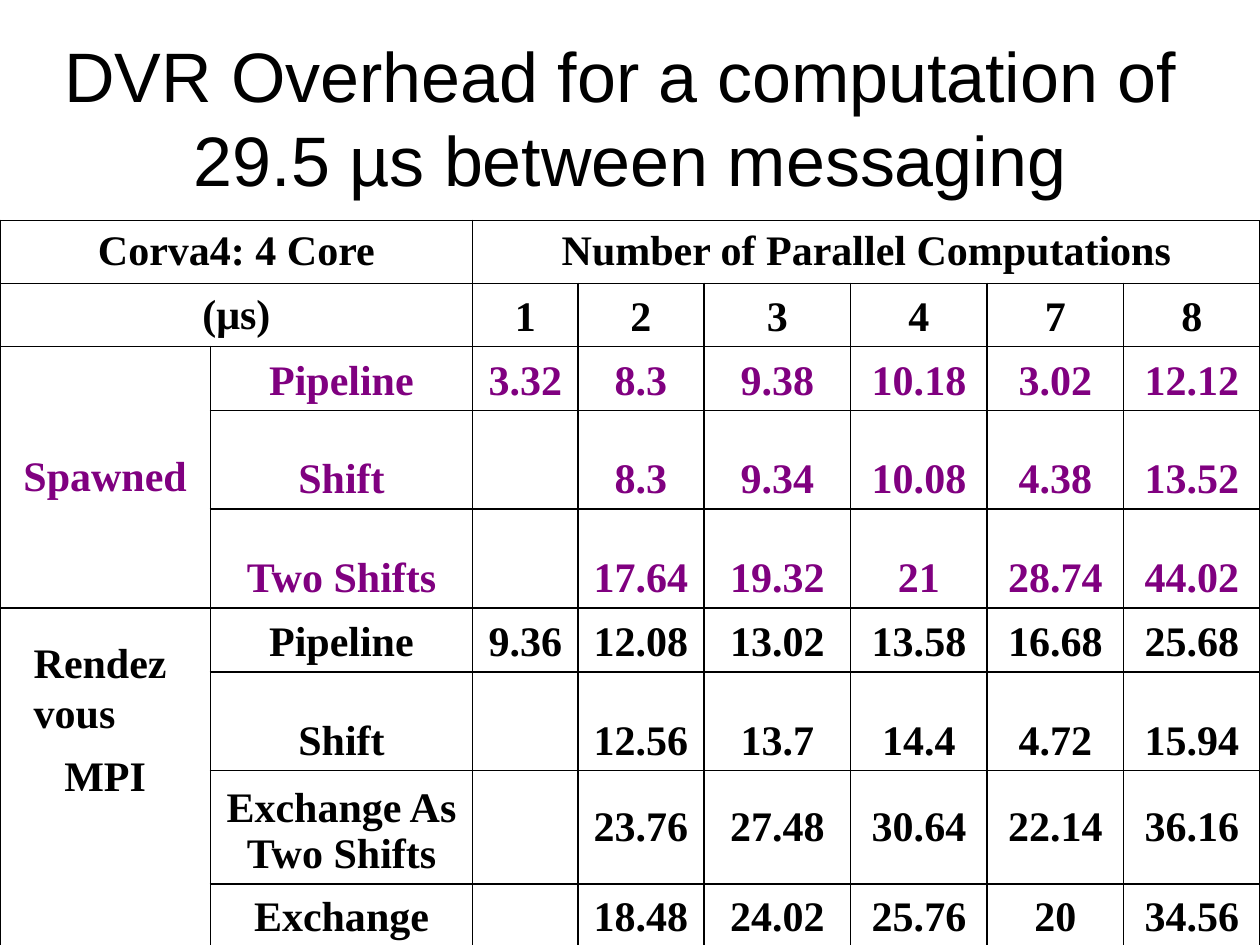
"""Build a slide with a table of messaging overheads."""
from dataclasses import dataclass

from lxml import etree
from pptx import Presentation
from pptx import util as u
from pptx.dml.color import RGBColor
from pptx.enum import text
from pptx.oxml.ns import qn


@dataclass(frozen=True)
class Theme:
    ink: str = "000000"
    accent: str = "800080"
    head_font: str = "Arial"
    body_font: str = "Times New Roman"
    head_size: int = 40
    body_size: int = 24
    head_leading: float = 48
    body_leading: float = 28.5
    rule: float = 1


@dataclass(frozen=True)
class Box:
    x: float
    y: float
    w: float
    h: float


@dataclass(frozen=True)
class Row:
    height: float
    label: str
    values: tuple
    color: str
    anchor: text.MSO_ANCHOR = text.MSO_ANCHOR.BOTTOM


@dataclass(frozen=True)
class Group:
    label: str
    first: int
    last: int
    color: str


T = Theme()
MIDDLE, BOTTOM = text.MSO_ANCHOR.MIDDLE, text.MSO_ANCHOR.BOTTOM
CENTER, LEFT = text.PP_ALIGN.CENTER, text.PP_ALIGN.LEFT
COLUMNS = (4.24, 5.29, 2.12, 2.54, 2.96, 2.75, 2.75, 2.75)
HEAD_HEIGHT = 1.27
COUNTS = ("1", "2", "3", "4", "7", "8")
ROWS = (
    Row(1.29, "Pipeline", ("3.32", "8.3", "9.38", "10.18", "3.02", "12.12"), T.accent),
    Row(1.99, "Shift", ("", "8.3", "9.34", "10.08", "4.38", "13.52"), T.accent),
    Row(1.99, "Two Shifts", ("", "17.64", "19.32", "21", "28.74", "44.02"), T.accent),
    Row(1.29, "Pipeline", ("9.36", "12.08", "13.02", "13.58", "16.68", "25.68"), T.ink),
    Row(1.99, "Shift", ("", "12.56", "13.7", "14.4", "4.72", "15.94"), T.ink),
    Row(2.28, "Exchange As\nTwo Shifts",
        ("", "23.76", "27.48", "30.64", "22.14", "36.16"), T.ink, MIDDLE),
    Row(1.27, "Exchange", ("", "18.48", "24.02", "25.76", "20", "34.56"), T.ink),
)
GROUPS = (Group("Spawned", 2, 4, T.accent), Group("MPI", 5, 8, T.ink))


def add_run(p, words: str, font: str, size: float, color: str, bold: bool) -> None:
    """Add one styled run to a paragraph."""
    r = p.add_run()
    r.text = words
    r.font.name, r.font.size, r.font.bold = font, u.Pt(size), bold
    r.font.color.rgb = RGBColor.from_string(color)


def add_lines(s, box: Box, lines: tuple, font: str, size: float, leading: float,
              align, anchor, bold: bool) -> None:
    """Add a text box whose lines share one paragraph."""
    sp = s.shapes.add_textbox(u.Cm(box.x), u.Cm(box.y), u.Cm(box.w), u.Cm(box.h))
    tf = sp.text_frame
    tf.word_wrap, tf.vertical_anchor = True, anchor
    p = tf.paragraphs[0]
    p.alignment, p.line_spacing = align, u.Pt(leading)
    for i, line in enumerate(lines):
        if i:
            p.add_line_break()
        add_run(p, line, font, size, T.ink, bold)


def fill_cell(cell, words: str, color: str = T.ink, anchor=BOTTOM) -> None:
    """Write centred bold text into a cell, one paragraph per line."""
    cell.vertical_anchor = anchor
    tf = cell.text_frame
    for i, line in enumerate(words.split("\n") if words else ()):
        p = tf.add_paragraph() if i else tf.paragraphs[0]
        p.alignment = CENTER
        add_run(p, line, T.body_font, T.body_size, color, True)


def rule_cell(cell) -> None:
    """Clear the fill of a cell and rule its four sides."""
    cell.fill.background()
    props = cell._tc.get_or_add_tcPr()
    for i, side in enumerate(("a:lnL", "a:lnR", "a:lnT", "a:lnB")):
        ln = etree.Element(qn(side), w=str(int(u.Pt(T.rule))))
        solid = etree.SubElement(ln, qn("a:solidFill"))
        etree.SubElement(solid, qn("a:srgbClr"), val=T.ink)
        props.insert(i, ln)


def add_overheads(s, x: float, y: float) -> None:
    """Add the table of overheads by pattern and parallel count."""
    heights = [HEAD_HEIGHT] * 2 + [row.height for row in ROWS]
    table = s.shapes.add_table(len(heights), len(COLUMNS), u.Cm(x), u.Cm(y),
                               u.Cm(sum(COLUMNS)), u.Cm(sum(heights))).table
    table.first_row = table.horz_banding = False
    for column, width in zip(table.columns, COLUMNS):
        column.width = u.Cm(width)
    for row, height in zip(table.rows, heights):
        row.height = u.Cm(height)
    for cell in table.iter_cells():
        rule_cell(cell)

    table.cell(0, 0).merge(table.cell(0, 1))
    table.cell(0, 2).merge(table.cell(0, 7))
    table.cell(1, 0).merge(table.cell(1, 1))
    fill_cell(table.cell(0, 0), "Corva4: 4 Core", anchor=MIDDLE)
    fill_cell(table.cell(0, 2), "Number of Parallel Computations", anchor=MIDDLE)
    fill_cell(table.cell(1, 0), "(μs)", anchor=MIDDLE)
    for c, count in enumerate(COUNTS, 2):
        fill_cell(table.cell(1, c), count)
    for group in GROUPS:
        table.cell(group.first, 0).merge(table.cell(group.last, 0))
        fill_cell(table.cell(group.first, 0), group.label, group.color, MIDDLE)
    for n, row in enumerate(ROWS, 2):
        fill_cell(table.cell(n, 1), row.label, row.color)
        for c, value in enumerate(row.values, 2):
            fill_cell(table.cell(n, c), value, row.color, row.anchor)


def main() -> None:
    """Build and save the slide."""
    prs = Presentation()
    prs.slide_width, prs.slide_height = u.Cm(25.4), u.Cm(19.05)
    s = prs.slides.add_slide(prs.slide_layouts[6])
    add_lines(s, Box(0, 0.76, 25.4, 3.18),
              ("DVR Overhead for a computation of ", "29.5 µs between messaging"),
              T.head_font, T.head_size, T.head_leading, CENTER, MIDDLE, False)
    add_lines(s, Box(0.43, 12.72, 3.6, 2.29), ("Rendez", "vous"),
              T.body_font, T.body_size, T.body_leading, LEFT, text.MSO_ANCHOR.TOP, True)
    add_overheads(s, 0, 4.44)
    prs.save("out.pptx")


if __name__ == "__main__":
    main()
